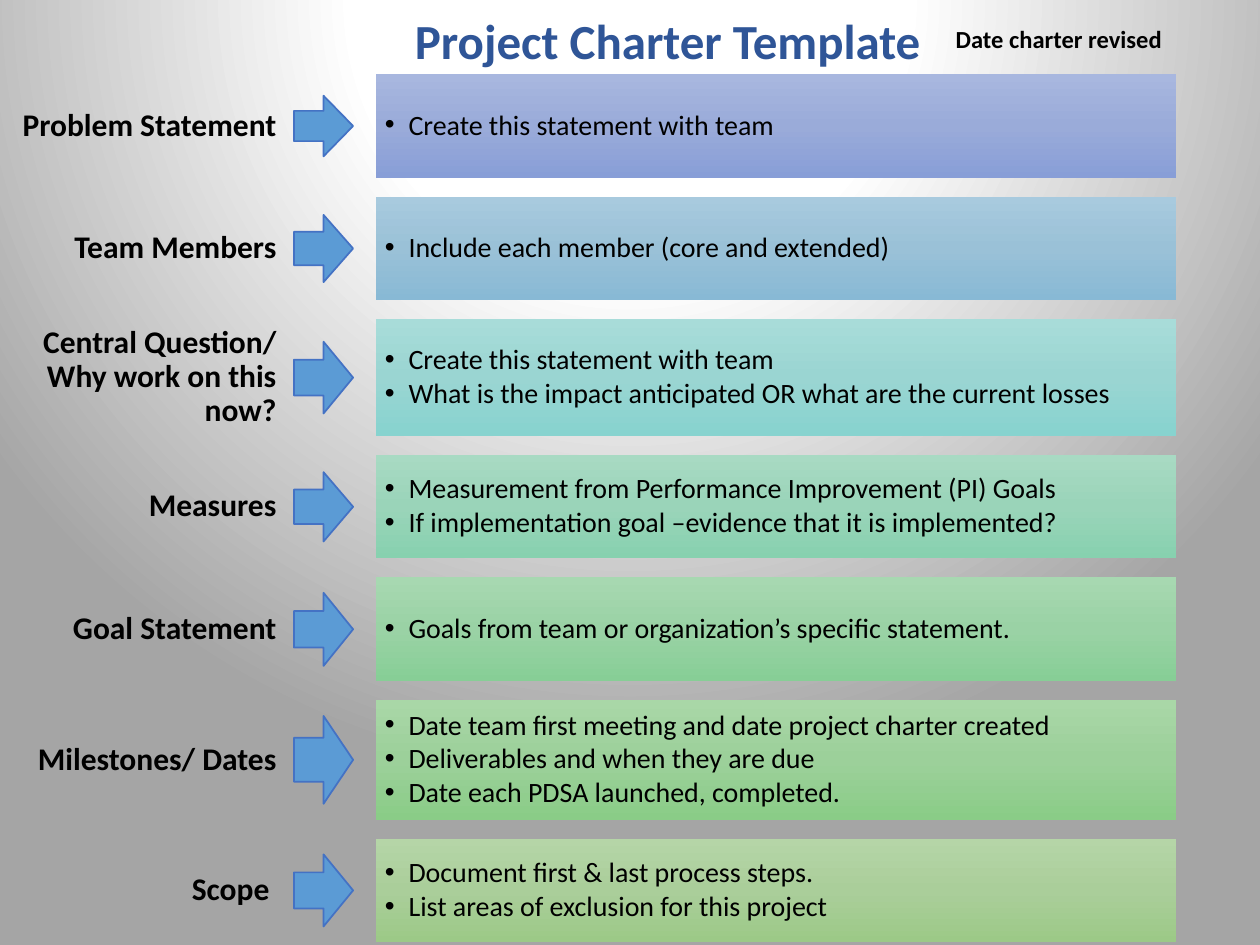
import pptx
import pptx.util
from pptx.dml.color import RGBColor
from pptx.enum.shapes import MSO_SHAPE
from pptx.enum.text import MSO_ANCHOR, PP_ALIGN
from pptx.oxml import parse_xml
from pptx.oxml.ns import nsdecls, qn

Pt = pptx.util.Pt

BLACK = RGBColor(0, 0, 0)
TITLE_BLUE = RGBColor(0x2F, 0x55, 0x97)
ARROW_FILL = RGBColor(0x5B, 0x9B, 0xD5)
ARROW_LINE = RGBColor(0x44, 0x72, 0xC4)
BACKGROUND = [(0, RGBColor(255, 255, 255)), (35, RGBColor(255, 255, 255)),
              (100, RGBColor(0xA5, 0xA5, 0xA5))]
CIRCLE = ('<a:path path="circle"><a:fillToRect l="50000" t="-80000" '
          'r="50000" b="180000"/></a:path>')
DOWNWARD = '<a:lin ang="5400000" scaled="0"/>'

TITLE = "Project Charter Template"
DATE_NOTE = "Date charter revised"

# label, bullets, bar height, arrow height, bar colours from top to bottom
SECTIONS = [
    ("Problem Statement", ["Create this statement with team"],
     59.2, 34.6, ("A8B7DF", "9AABD9", "889ED7")),
    ("Team Members", ["Include each member (core and extended)"],
     59.2, 38.4, ("A8CADE", "9AC1D7", "88B9D5")),
    ("Central Question/ Why work on this now?",
     ["Create this statement with team",
      "What is the impact anticipated OR what are the current losses"],
     66.8, 41, ("A8DCD9", "9AD5D2", "87D3CF")),
    ("Measures",
     ["Measurement from Performance Improvement (PI) Goals",
      "If implementation goal –evidence that it is implemented?"],
     59.2, 39.6, ("A8DAC3", "9AD4B9", "87D1AF")),
    ("Goal Statement", ["Goals from team or organization’s specific statement."],
     59.2, 41.8, ("A7D8B1", "9AD2A5", "87CE96")),
    ("Milestones/ Dates",
     ["Date team first meeting and date project charter created",
      "Deliverables and when they are due",
      "Date each PDSA launched, completed."],
     68.4, 50.2, ("A9D7A7", "9CD09A", "8ACC87")),
    ("Scope ",
     ["Document first & last process steps.",
      "List areas of exclusion for this project"],
     59.2, 41.2, ("B5D5A7", "AACE9A", "9CC987")),
]

FIRST_TOP, GAP = 42.4, 10.8
LABEL_W = 168
ARROW_X, ARROW_W = 168, 33.8
BAR_X, BAR_W = 215, 457


def set_gradient(fill, element, stops, shade):
    """Give the fill inside element any number of stops and a shade type."""
    fill.gradient()
    old = element.find(".//" + qn("a:gradFill"))
    gs = "".join(f'<a:gs pos="{pos * 1000}"><a:srgbClr val="{color}"/></a:gs>'
                 for pos, color in stops)
    old.getparent().replace(old, parse_xml(
        f'<a:gradFill {nsdecls("a")} rotWithShape="1"><a:gsLst>{gs}</a:gsLst>'
        f'{shade}</a:gradFill>'))


def write(sp, lines, size, color=BLACK, bold=False, align=PP_ALIGN.LEFT,
          anchor=MSO_ANCHOR.TOP, insets=(7.2, 3.6), wrap=True,
          spacing=1.0, after=0, bullet=False):
    tf = sp.text_frame
    tf.word_wrap = wrap
    tf.vertical_anchor = anchor
    tf.margin_left = tf.margin_right = Pt(insets[0])
    tf.margin_top = tf.margin_bottom = Pt(insets[1])
    for i, line in enumerate(lines):
        p = tf.paragraphs[0] if i == 0 else tf.add_paragraph()
        p.alignment = align
        p.line_spacing = spacing
        p.space_before, p.space_after = Pt(0), Pt(after)
        if bullet:
            pPr = p._p.get_or_add_pPr()
            pPr.set("marL", str(Pt(13.5)))
            pPr.set("indent", str(-Pt(13.5)))
            pPr.append(parse_xml(f'<a:buFont {nsdecls("a")} typeface="Arial"/>'))
            pPr.append(parse_xml(f'<a:buChar {nsdecls("a")} char="•"/>'))
        r = p.add_run()
        r.text = line
        r.font.name, r.font.size, r.font.bold = "Calibri", Pt(size), bold
        r.font.color.rgb = color


def add_shape(s, kind, *box):
    sp = s.shapes.add_shape(kind, *map(Pt, box))
    sp.shadow.inherit = False
    return sp


def add_section(s, top, label, bullets, height, arrow_h, colors):
    sp = s.shapes.add_textbox(Pt(0), Pt(top), Pt(LABEL_W), Pt(height))
    write(sp, [label], 18, bold=True, align=PP_ALIGN.RIGHT,
          anchor=MSO_ANCHOR.MIDDLE, insets=(10, 3.6), spacing=0.9)

    arrow = add_shape(s, MSO_SHAPE.RIGHT_ARROW, ARROW_X,
                      top + (height - arrow_h) / 2, ARROW_W, arrow_h)
    arrow.fill.solid()
    arrow.fill.fore_color.rgb = ARROW_FILL
    arrow.line.color.rgb = ARROW_LINE
    arrow.line.width = Pt(1)

    bar = add_shape(s, MSO_SHAPE.RECTANGLE, BAR_X, top, BAR_W, height)
    stops = zip((0, 50, 100), map(RGBColor.from_string, colors))
    set_gradient(bar.fill, bar._element.spPr, stops, DOWNWARD)
    bar.line.fill.background()
    write(bar, bullets, 16, anchor=MSO_ANCHOR.MIDDLE, insets=(5, 5),
          spacing=0.9, after=2, bullet=True)


def main():
    prs = pptx.Presentation()
    prs.slide_width, prs.slide_height = Pt(720), Pt(540)
    s = prs.slides.add_slide(prs.slide_layouts[5])
    set_gradient(s.background.fill, s._element, BACKGROUND, CIRCLE)

    title = s.shapes.title
    title.left, title.top, title.width, title.height = map(Pt, (211, 2.2, 341, 41))
    write(title, [TITLE], 28, color=TITLE_BLUE, bold=True, align=PP_ALIGN.CENTER)

    top = FIRST_TOP
    for section in SECTIONS:
        add_section(s, top, *section)
        top += section[2] + GAP

    note = s.shapes.add_textbox(Pt(539), Pt(10), Pt(147), Pt(24.2))
    write(note, [DATE_NOTE], 14, bold=True)
    prs.save("out.pptx")


if __name__ == "__main__":
    main()
